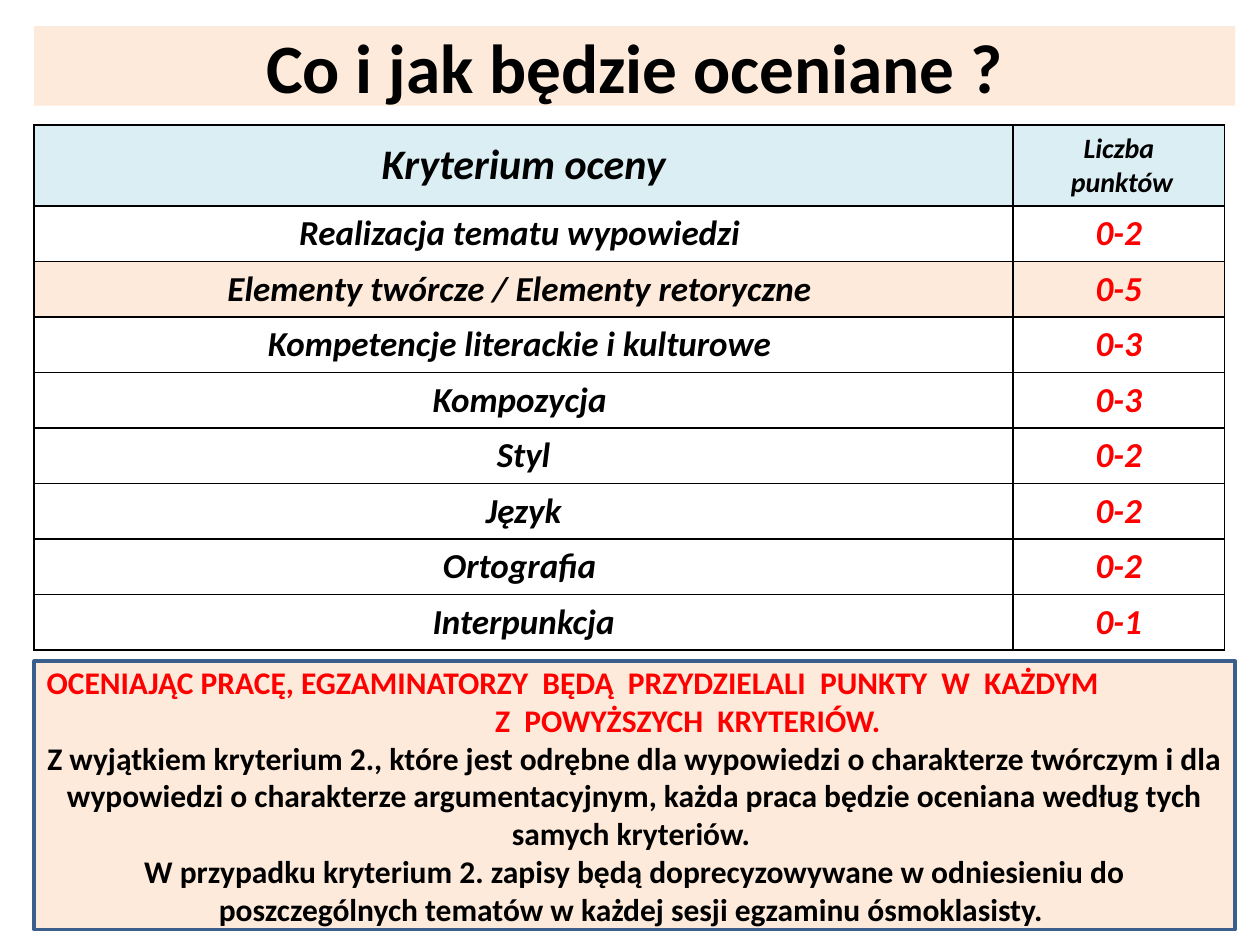
from lxml.etree import SubElement
from pptx import Presentation
from pptx.dml.color import RGBColor
from pptx.enum.shapes import MSO_SHAPE
from pptx.enum.text import MSO_ANCHOR, PP_ALIGN
from pptx.oxml.ns import qn
from pptx.util import Cm, Pt

COLORS = {
    "peach": "FDEADA", "sky": "DBEEF4", "white": "FFFFFF",
    "black": "000000", "red": "FF0000", "navy": "3A5F8C",
}
LEFT, WIDTH = 0.69, 24.21

CRITERIA = [
    ("Realizacja tematu wypowiedzi ", "0-2"),
    ("Elementy twórcze / Elementy retoryczne ", "0-5"),
    ("Kompetencje literackie i kulturowe ", "0-3"),
    ("Kompozycja ", "0-3"),
    ("Styl", "0-2"),
    ("Język", "0-2"),
    ("Ortografia ", "0-2"),
    ("Interpunkcja", "0-1"),
]
# Text, colour, alignment, left indent in cm
NOTES = [
    ("OCENIAJĄC PRACĘ, EGZAMINATORZY  BĘDĄ  PRZYDZIELALI  PUNKTY  W  KAŻDYM",
     "red", PP_ALIGN.LEFT, 0),
    ("Z  POWYŻSZYCH  KRYTERIÓW.", "red", PP_ALIGN.CENTER, 2.14),
    ("Z wyjątkiem kryterium 2., które jest odrębne dla wypowiedzi o charakterze "
     "twórczym i dla wypowiedzi o charakterze argumentacyjnym, każda praca będzie "
     "oceniana według tych samych kryteriów. ", "black", PP_ALIGN.CENTER, 0),
    ("W przypadku kryterium 2. zapisy będą doprecyzowywane w odniesieniu do "
     "poszczególnych tematów w każdej sesji egzaminu ósmoklasisty. ",
     "black", PP_ALIGN.CENTER, 0),
]


def rgb(name):
    return RGBColor.from_string(COLORS[name])


class SlideBuilder:
    """Holds the style and the page being filled."""
    font = "Calibri"

    def __init__(self, page):
        self.page = page

    def style(self, paragraph, size, color, italic=False, align=PP_ALIGN.CENTER):
        paragraph.alignment = align
        for span in paragraph.runs:
            span.font.name = self.font
            span.font.size = Pt(size)
            span.font.bold = True
            span.font.italic = italic
            span.font.color.rgb = rgb(color)

    def panel(self, top, height, paragraphs, size, line=None):
        box = self.page.shapes.add_shape(
            MSO_SHAPE.RECTANGLE, Cm(LEFT), Cm(top), Cm(WIDTH), Cm(height))
        box.shadow.inherit = False
        box.fill.solid()
        box.fill.fore_color.rgb = rgb("peach")
        if line:
            box.line.color.rgb = rgb(line)
            box.line.width = Pt(2)
        else:
            box.line.fill.background()
        frame = box.text_frame
        frame.word_wrap = True
        frame.vertical_anchor = MSO_ANCHOR.MIDDLE
        frame.text = "\n".join(text for text, *_ in paragraphs)
        for paragraph, (_, color, align, indent) in zip(frame.paragraphs, paragraphs):
            self.style(paragraph, size, color, align=align)
            if indent:
                paragraph._p.get_or_add_pPr().set("marL", str(Cm(indent)))

    def cell(self, cell, text, size, color, fill):
        cell.text = text
        cell.vertical_anchor = MSO_ANCHOR.MIDDLE
        for paragraph in cell.text_frame.paragraphs:
            self.style(paragraph, size, color, italic=True)
        properties = cell._tc.get_or_add_tcPr()
        for side in ("a:lnL", "a:lnR", "a:lnT", "a:lnB"):
            border = SubElement(properties, qn(side), w=str(Pt(1)))
            solid = SubElement(border, qn("a:solidFill"))
            SubElement(solid, qn("a:srgbClr"), val=COLORS["black"])
        cell.fill.solid()
        cell.fill.fore_color.rgb = rgb(fill)

    def criteria_table(self, top, widths, header_height, row_height):
        count = len(CRITERIA)
        table = self.page.shapes.add_table(
            count + 1, 2, Cm(LEFT), Cm(top), Cm(sum(widths)),
            Cm(header_height + count * row_height)).table
        for column, width in zip(table.columns, widths):
            column.width = Cm(width)
        for index, row in enumerate(table.rows):
            row.height = Cm(row_height if index else header_height)
        self.cell(table.cell(0, 0), "Kryterium oceny", 24, "black", "sky")
        self.cell(table.cell(0, 1), "Liczba\n punktów", 16, "black", "sky")
        for index, (criterion, points) in enumerate(CRITERIA, 1):
            fill = "peach" if index == 2 else "white"
            self.cell(table.cell(index, 0), criterion, 20, "black", fill)
            self.cell(table.cell(index, 1), points, 20, "red", fill)


def main():
    deck = Presentation()
    deck.slide_width, deck.slide_height = Cm(25.4), Cm(19.05)
    builder = SlideBuilder(deck.slides.add_slide(deck.slide_layouts[6]))

    # Title band
    title = [("Co i jak będzie oceniane ?", "black", PP_ALIGN.CENTER, 0)]
    builder.panel(0.53, 1.6, title, 39.6)
    # Criteria and points
    builder.criteria_table(2.52, (19.73, 4.27), 1.62, 1.04)
    # Explanatory notes
    builder.panel(13.33, 5.41, NOTES, 18, line="navy")

    deck.save("out.pptx")


if __name__ == "__main__":
    main()
